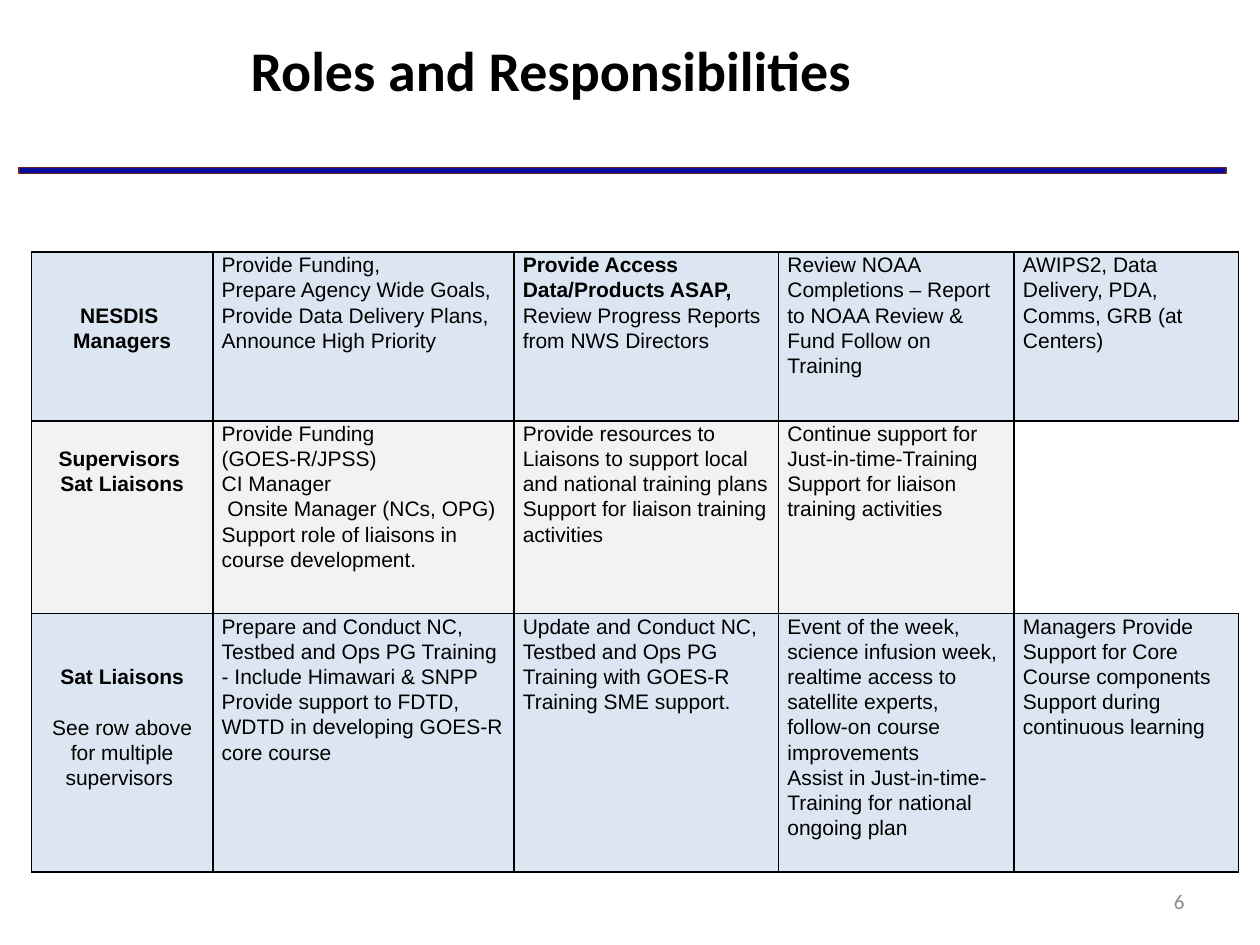
from lxml import etree
from pptx import Presentation
from pptx.dml.color import RGBColor
from pptx.enum.shapes import MSO_SHAPE
from pptx.enum.text import MSO_ANCHOR, PP_ALIGN
from pptx.oxml.ns import qn
from pptx.util import Inches, Pt

RECTANGLE = MSO_SHAPE.RECTANGLE
TOP, MIDDLE = MSO_ANCHOR.TOP, MSO_ANCHOR.MIDDLE
LEFT, CENTER, RIGHT = PP_ALIGN.LEFT, PP_ALIGN.CENTER, PP_ALIGN.RIGHT

THEME = {
    "heading_font": "Calibri", "body_font": "Arial",
    "title_size": 32, "body_size": 12, "line_spacing": 1.07, "border": 1,
    "ink": "000000", "muted": "888888", "rule": "0A0A9E", "rule_edge": "632423",
    "bands": ["DCE6F2", "F2F2F2"],
}

TITLE = "Roles and Responsibilities"
PAGE_NUMBER = "6"
COLUMN_WIDTHS = [1.44, 2.39, 2.1, 1.87, 1.78]
ROLES = [
    {
        "height": 1.34, "label_lines_down": 2,
        "label": ["NESDIS ", "Managers"], "note": [],
        "duties": [
            ["Provide Funding,", "Prepare Agency Wide Goals,",
             "Provide Data Delivery Plans,", "Announce High Priority"],
            ["Provide Access Data/Products ASAP,",
             "Review Progress Reports from NWS Directors"],
            ["Review NOAA Completions – Report to NOAA Review & Fund Follow on Training"],
            ["AWIPS2, Data Delivery, PDA, Comms, GRB (at Centers)"],
        ],
    },
    {
        "height": 1.53, "label_lines_down": 1,
        "label": ["Supervisors ", "Sat Liaisons"], "note": [],
        "duties": [
            ["Provide Funding (GOES-R/JPSS)", "CI Manager", " Onsite Manager (NCs, OPG)",
             "Support role of liaisons in course development."],
            ["Provide resources to Liaisons to support local and national training plans",
             "Support for liaison training activities"],
            ["Continue support for Just-in-time-Training",
             "Support for liaison training activities"],
            [],
        ],
    },
    {
        "height": 2.05, "label_lines_down": 2,
        "label": ["Sat Liaisons"], "note": ["See row above for multiple supervisors "],
        "duties": [
            ["Prepare and Conduct NC, Testbed and Ops PG Training - Include Himawari & SNPP",
             "Provide support to FDTD, WDTD in developing GOES-R core course"],
            ["Update and Conduct NC, Testbed and Ops PG Training with GOES-R",
             "Training SME support."],
            ["Event of the week, science infusion week, realtime access to satellite experts,",
             "follow-on course improvements",
             "Assist in Just-in-time-Training for national ongoing plan"],
            ["Managers Provide", "Support for Core Course components",
             "Support during continuous learning"],
        ],
    },
]
EMPHASISED = {"Provide Access Data/Products ASAP,"}
LINE_HEIGHT = 0.2


def write(frame, lines, *, font=THEME["body_font"], size=THEME["body_size"],
          color=THEME["ink"], bold=(), align=LEFT, spacing=None, gap_before=()):
    for index, line in enumerate(lines):
        paragraph = frame.paragraphs[0] if index == 0 else frame.add_paragraph()
        paragraph.alignment = align
        if spacing:
            paragraph.line_spacing = spacing
        if line in gap_before:
            paragraph.space_before = Inches(LINE_HEIGHT)
        run = paragraph.add_run()
        run.text = line
        run.font.name = font
        run.font.size = Pt(size)
        run.font.bold = line in bold
        run.font.color.rgb = RGBColor.from_string(color)


def add_text(slide, text, box, anchor=TOP, inset_y=0.05, **style):
    frame = slide.shapes.add_textbox(*map(Inches, box)).text_frame
    frame.word_wrap = True
    frame.vertical_anchor = anchor
    frame.margin_left = frame.margin_right = Inches(0.1)
    frame.margin_top = frame.margin_bottom = Inches(inset_y)
    write(frame, [text], **style)


def set_borders(cell, sides):
    properties = cell._tc.get_or_add_tcPr()
    for side in "LRTB":
        line = etree.SubElement(properties, qn(f"a:ln{side}"), w=str(Pt(THEME["border"])))
        if side in sides:
            fill = etree.SubElement(line, qn("a:solidFill"))
            etree.SubElement(fill, qn("a:srgbClr"), val=THEME["ink"])
        else:
            etree.SubElement(line, qn("a:noFill"))


def fill_cell(cell, lines, band, lines_down=0, **style):
    cell.margin_left = cell.margin_right = Inches(0.07)
    cell.margin_top = Inches(lines_down * LINE_HEIGHT)
    cell.margin_bottom = 0
    set_borders(cell, "LRTB" if lines else "LTB")
    if lines:
        cell.fill.solid()
        cell.fill.fore_color.rgb = RGBColor.from_string(band)
        write(cell.text_frame, lines, spacing=THEME["line_spacing"], **style)
    else:
        cell.fill.background()


def add_roles_table(slide):
    total_height = sum(role["height"] for role in ROLES)
    table = slide.shapes.add_table(
        len(ROLES), len(COLUMN_WIDTHS), Inches(0.25), Inches(2),
        Inches(sum(COLUMN_WIDTHS)), Inches(total_height)).table
    table.first_row = table.horz_banding = False
    for column, width in zip(table.columns, COLUMN_WIDTHS):
        column.width = Inches(width)
    for row, role in enumerate(ROLES):
        table.rows[row].height = Inches(role["height"])
        band = THEME["bands"][row % 2]
        fill_cell(table.cell(row, 0), role["label"] + role["note"], band,
                  role["label_lines_down"], align=CENTER,
                  bold=role["label"], gap_before=role["note"])
        for column, duties in enumerate(role["duties"], 1):
            fill_cell(table.cell(row, column), duties, band, bold=EMPHASISED)


def main():
    deck = Presentation()
    deck.slide_width, deck.slide_height = Inches(10), Inches(7.5)
    slide = deck.slides.add_slide(deck.slide_layouts[6])

    rule = slide.shapes.add_shape(RECTANGLE, *map(Inches, (0.15, 1.33, 9.58, 0.05)))
    rule.shadow.inherit = False
    rule.fill.solid()
    rule.fill.fore_color.rgb = RGBColor.from_string(THEME["rule"])
    rule.line.color.rgb = RGBColor.from_string(THEME["rule_edge"])
    rule.line.width = Pt(0.75)

    add_text(slide, PAGE_NUMBER, (7.17, 6.95, 2.33, 0.4), MIDDLE,
             font=THEME["heading_font"], color=THEME["muted"], align=RIGHT)
    add_roles_table(slide)
    add_text(slide, TITLE, (1.89, 0.18, 5.91, 0.75), inset_y=0.1,
             font=THEME["heading_font"], size=THEME["title_size"], bold=[TITLE])
    deck.save("out.pptx")


if __name__ == "__main__":
    main()
